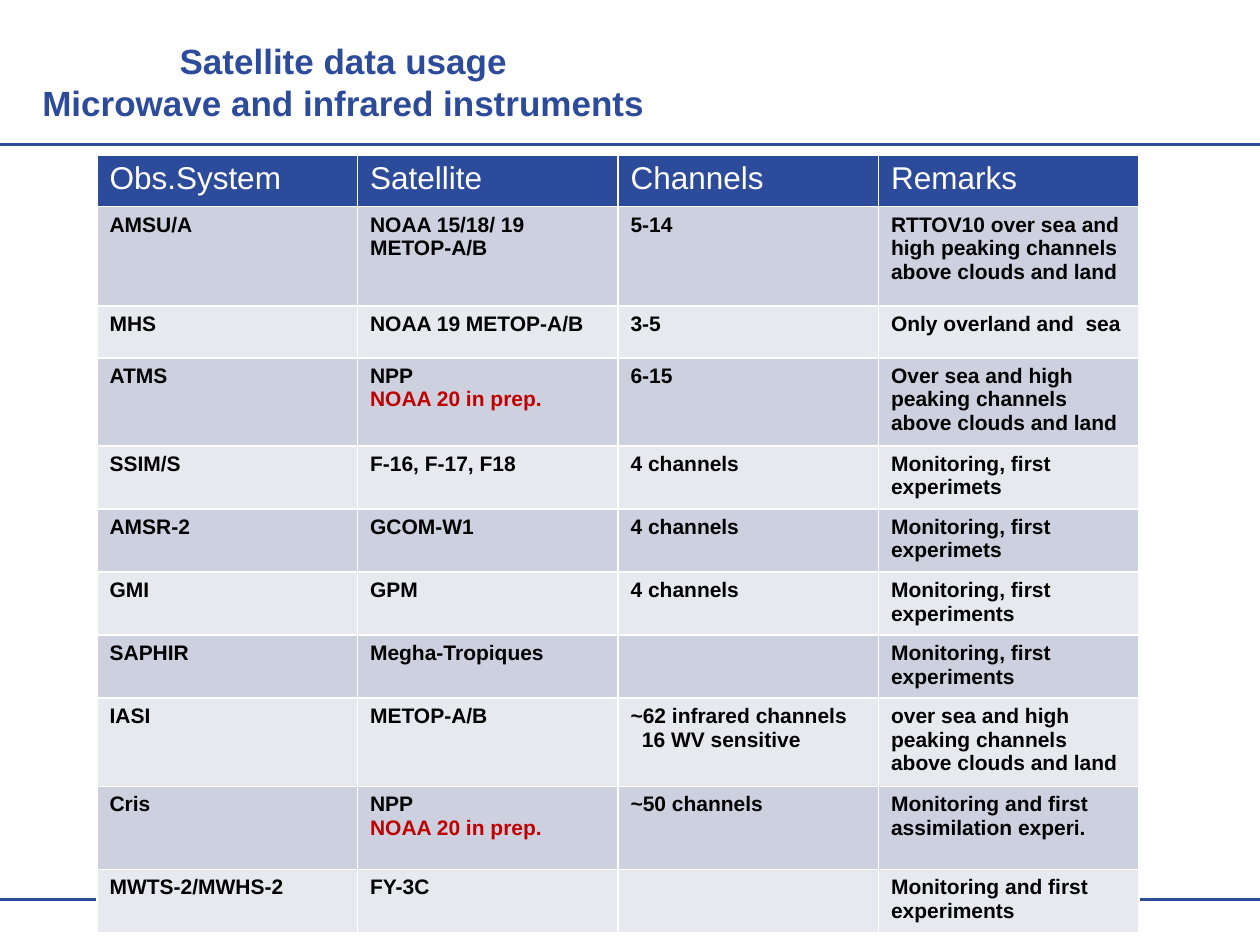
from lxml import etree
from pptx import Presentation, util as u
from pptx.dml.color import RGBColor
from pptx.enum import shapes, text
from pptx.oxml.ns import qn

BLUE, RED, BLACK, WHITE = "2D4B9B", "C00000", "000000", "FFFFFF"
BANDS = "CDD0DE", "E8E9EF"


def color(hex_value):
    return RGBColor.from_string(hex_value)


def format_text(paragraph, size, hex_value, bold):
    for run in paragraph.runs:
        run.font.name = "Arial"
        run.font.size = u.Pt(size)
        run.font.bold = bold
        run.font.color.rgb = color(hex_value)


prs = Presentation()
prs.slide_width, prs.slide_height = u.Inches(10), u.Inches(7.5)
slide = prs.slides.add_slide(prs.slide_layouts[5])

# Heading
title = slide.shapes.title
title.left, title.top = u.Inches(0.22), u.Inches(0.26)
title.width, title.height = u.Inches(5.01), u.Inches(0.77)
heading = title.text_frame
heading.text = "Satellite data usage\nMicrowave and infrared instruments"
heading.word_wrap = False
heading.auto_size = text.MSO_AUTO_SIZE.SHAPE_TO_FIT_TEXT
heading.vertical_anchor = text.MSO_ANCHOR.TOP
for line in heading.paragraphs:
    line.alignment = text.PP_ALIGN.CENTER
    line.space_before = u.Pt(0)
    format_text(line, 20, BLUE, True)

# Rules below the heading and above the footer
for y in (1.15, 7.14):
    rule = slide.shapes.add_connector(
        shapes.MSO_CONNECTOR.STRAIGHT, 0, u.Inches(y), prs.slide_width, u.Inches(y))
    rule.line.color.rgb = color(BLUE)
    rule.line.width = u.Pt(1.75)
    etree.SubElement(rule._element.spPr, qn("a:effectLst"))

# Instruments: row height, then one entry per column
ONE_LINE, TWO_LINES, THREE_LINES, FOUR_LINES = 0.41, 0.47, 0.66, 0.79
PEAKING = "ver sea and high peaking channels above clouds and land"
PREPARED = "NOAA 20 in prep."
instruments = [
    (ONE_LINE, "Obs.System", "Satellite", "Channels", "Remarks"),
    (FOUR_LINES, "AMSU/A", "NOAA 15/18/ 19\nMETOP-A/B", "5-14",
     "RTTOV10 over sea and high peaking channels above clouds and land"),
    (ONE_LINE, "MHS", "NOAA 19 METOP-A/B", "3-5", "Only overland and  sea"),
    (THREE_LINES, "ATMS", "NPP\n" + PREPARED, "6-15", "O" + PEAKING),
    (TWO_LINES, "SSIM/S", "F-16, F-17, F18", "4 channels", "Monitoring, first experimets"),
    (TWO_LINES, "AMSR-2", "GCOM-W1", "4 channels", "Monitoring, first experimets"),
    (TWO_LINES, "GMI", "GPM", "4 channels", "Monitoring, first experiments"),
    (TWO_LINES, "SAPHIR", "Megha-Tropiques", "", "Monitoring, first experiments"),
    (THREE_LINES, "IASI", "METOP-A/B", "~62 infrared channels\n16 WV sensitive", "o" + PEAKING),
    (THREE_LINES, "Cris", "NPP\n" + PREPARED, "~50 channels",
     "Monitoring and first assimilation experi."),
    (TWO_LINES, "MWTS-2/MWHS-2", "FY-3C", "", "Monitoring and first experiments"),
]
COLUMNS = 4
table_height = sum(row[0] for row in instruments)
table = slide.shapes.add_table(
    len(instruments), COLUMNS, u.Inches(0.77), u.Inches(1.23),
    u.Inches(8.27), u.Inches(table_height)).table

for r, (height, *entries) in enumerate(instruments):
    table.rows[r].height = u.Inches(height)
    is_header = r == 0
    for c, entry in enumerate(entries):
        cell = table.cell(r, c)
        cell.fill.solid()
        cell.fill.fore_color.rgb = color(BLUE if is_header else BANDS[(r - 1) % 2])
        cell.text_frame.text = entry
        for line in cell.text_frame.paragraphs:
            line.font.size = u.Pt(18 if is_header else 12)
            if is_header:
                format_text(line, 18, WHITE, False)
            else:
                format_text(line, 12, RED if line.text == PREPARED else BLACK, True)
            if line.text.startswith("16 WV"):
                line._p.get_or_add_pPr().set("marL", str(u.Inches(0.09)))

prs.save("out.pptx")
